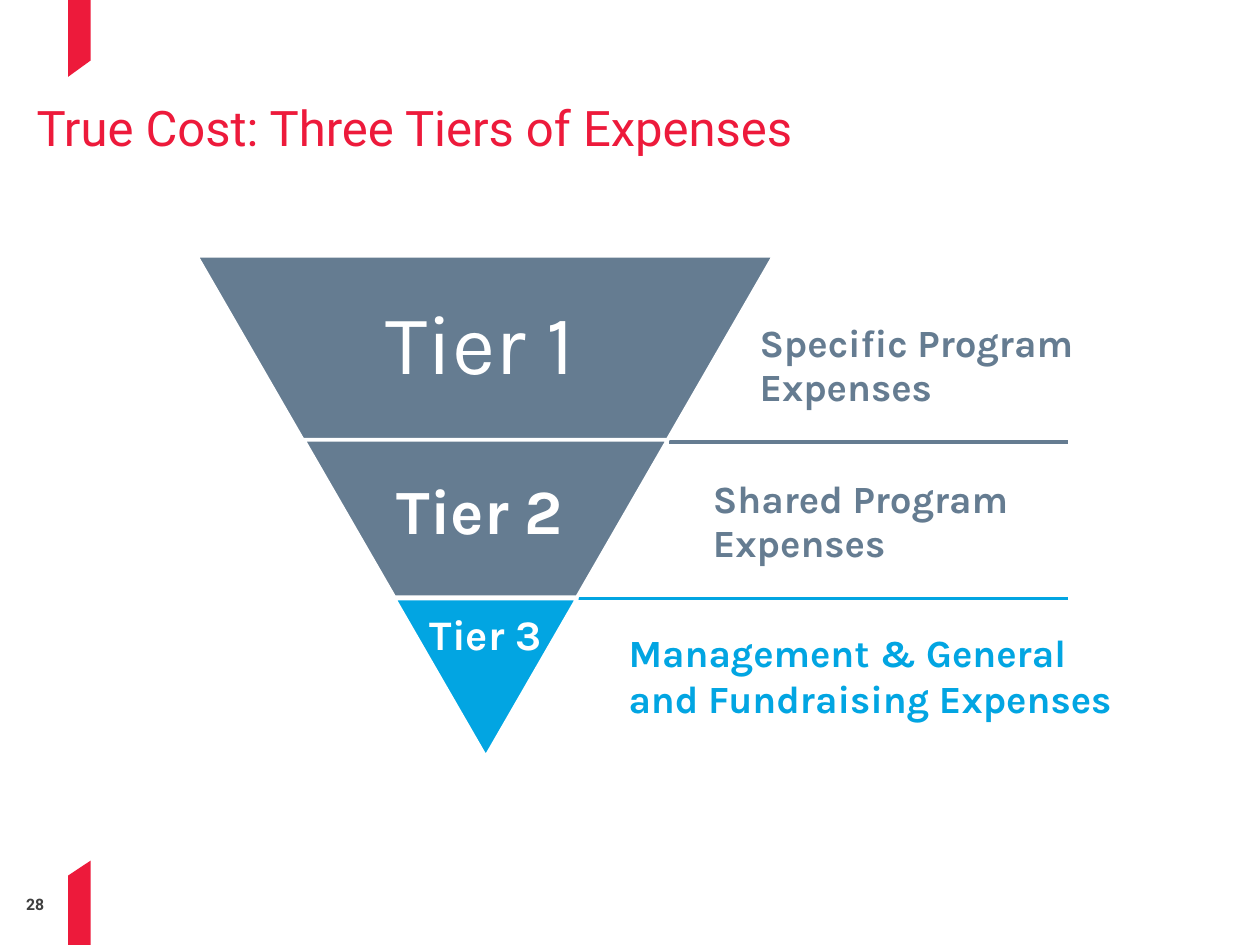
from pptx import Presentation
from pptx import util as u
from pptx.dml.color import RGBColor
from pptx.enum import shapes, text
from pptx.oxml.ns import qn
from lxml import etree

RED, SLATE, BLUE, WHITE, GREY = "ED1A3B", "657C91", "02A5E2", "FFFFFF", "404040"
SLOPE = 0.577


def color(value):
    """Turn a hex string into a colour."""
    return RGBColor.from_string(value)


def add_text(slide, box, lines, size, fill, font="Karla", bold=False,
             align=text.PP_ALIGN.LEFT, spacing=1.0, gap=0, inset=(0.1, 0.05)):
    """Place lines of text, one paragraph each, in a box."""
    frame = slide.shapes.add_textbox(*map(u.Inches, box)).text_frame
    frame.word_wrap = True
    frame.margin_left = frame.margin_right = u.Inches(inset[0])
    frame.margin_top = frame.margin_bottom = u.Inches(inset[1])
    for index, line in enumerate(lines):
        paragraph = frame.add_paragraph() if index else frame.paragraphs[0]
        paragraph.text = line
        paragraph.alignment = align
        paragraph.line_spacing = spacing
        paragraph.space_before = u.Pt(gap if index else 0)
        paragraph.font.name = font
        paragraph.font.size = u.Pt(size)
        paragraph.font.bold = bold
        paragraph.font.color.rgb = color(fill)


def add_ribbon(slide, left, top, width, points):
    """Draw a red ribbon from points given as width share and height."""
    corners = [(u.Inches(left + x * width), u.Inches(top + y)) for x, y in points]
    builder = slide.shapes.build_freeform(*corners[0])
    builder.add_line_segments(corners[1:], close=True)
    ribbon = builder.convert_to_shape()
    ribbon.shadow.inherit = False
    ribbon.fill.solid()
    ribbon.fill.fore_color.rgb = color(RED)
    ribbon.line.fill.background()


def add_frame(slide):
    """Add the ribbons, page number and title."""
    add_ribbon(slide, 0.54, 0, 0.18, [(0, 0), (1, 0), (1, 0.48), (0, 0.61)])
    add_ribbon(slide, 0.54, 6.83, 0.18, [(0, 0.12), (1, 0), (1, 0.67), (0, 0.67)])
    add_text(slide, (0, 7.1, 0.35, 0.15), ["28"], 9, GREY, font="Roboto",
             bold=True, align=text.PP_ALIGN.RIGHT, inset=(0, 0))
    add_text(slide, (0.29, 0.75, 9.42, 1.05), ["True Cost: Three Tiers of Expenses"],
             28, RED, font="Roboto", spacing=1.05, inset=(0, 0))


def add_divider(slide, left, right, y, stroke):
    """Draw a level line below a tier."""
    start, end, level = map(u.Inches, (left, right, y))
    divider = slide.shapes.add_connector(shapes.MSO_CONNECTOR.STRAIGHT, start, level, end, level)
    divider.line.color.rgb = color(stroke)
    divider.line.width = u.Pt(2.25)
    etree.SubElement(divider._element.spPr, qn("a:effectLst"))


def add_tier(slide, box, fill, name, name_box, size, bold):
    """Add one slice of the inverted pyramid with its name."""
    tier = slide.shapes.add_shape(shapes.MSO_SHAPE.TRAPEZOID, *map(u.Inches, box))
    tier.rotation = 180
    tier.adjustments[0] = SLOPE
    tier.shadow.inherit = False
    tier.fill.solid()
    tier.fill.fore_color.rgb = color(fill)
    tier.line.color.rgb = color(WHITE)
    tier.line.width = u.Pt(2)
    add_text(slide, name_box, [name], size, WHITE, bold=bold, align=text.PP_ALIGN.CENTER)


def add_pyramid(slide, left, top):
    """Add the dividers, expense labels and tiers from the pyramid's top left."""
    right = left + 6.92
    add_divider(slide, left + 2.94, right, top + 2.72, BLUE)
    add_divider(slide, left + 3.75, right, top + 1.48, SLATE)
    labels = [
        ((4.37, 0.52, 3.8, 0.77), ["Specific Program", "Expenses"], SLATE, 0.8, 4.4),
        ((4, 1.76, 4.33, 0.77), ["Shared Program", "Expenses"], SLATE, 0.8, 4.4),
        ((3.33, 2.91, 5.33, 0.84),
         ["Management & General", "and Fundraising Expenses"], BLUE, 1.0, 0),
    ]
    for (x, y, width, height), lines, fill, spacing, gap in labels:
        add_text(slide, (left + x, top + y, width, height), lines, 22, fill,
                 bold=True, spacing=spacing, gap=gap)
    tiers = [
        ((0, 0, 4.58, 1.47), SLATE, "Tier 1", (0.75, 0.23, 3, 0.91), 48, False),
        ((0.85, 1.46, 2.89, 1.25), SLATE, "Tier 2", (0.75, 1.66, 3, 0.71), 36, True),
        ((1.57, 2.72, 1.45, 1.25), BLUE, "Tier 3", (1.57, 2.75, 1.45, 0.5), 24, True),
    ]
    for box, fill, name, name_box, size, bold in tiers:
        placed, name_placed = [(left + x, top + y, width, height)
                               for x, y, width, height in (box, name_box)]
        add_tier(slide, placed, fill, name, name_placed, size, bold)


def main():
    """Build and save the slide."""
    deck = Presentation()
    deck.slide_width, deck.slide_height = u.Inches(10), u.Inches(7.5)
    slide = deck.slides.add_slide(deck.slide_layouts[6])
    add_frame(slide)
    add_pyramid(slide, 1.56, 2.03)
    deck.save("out.pptx")


if __name__ == "__main__":
    main()
